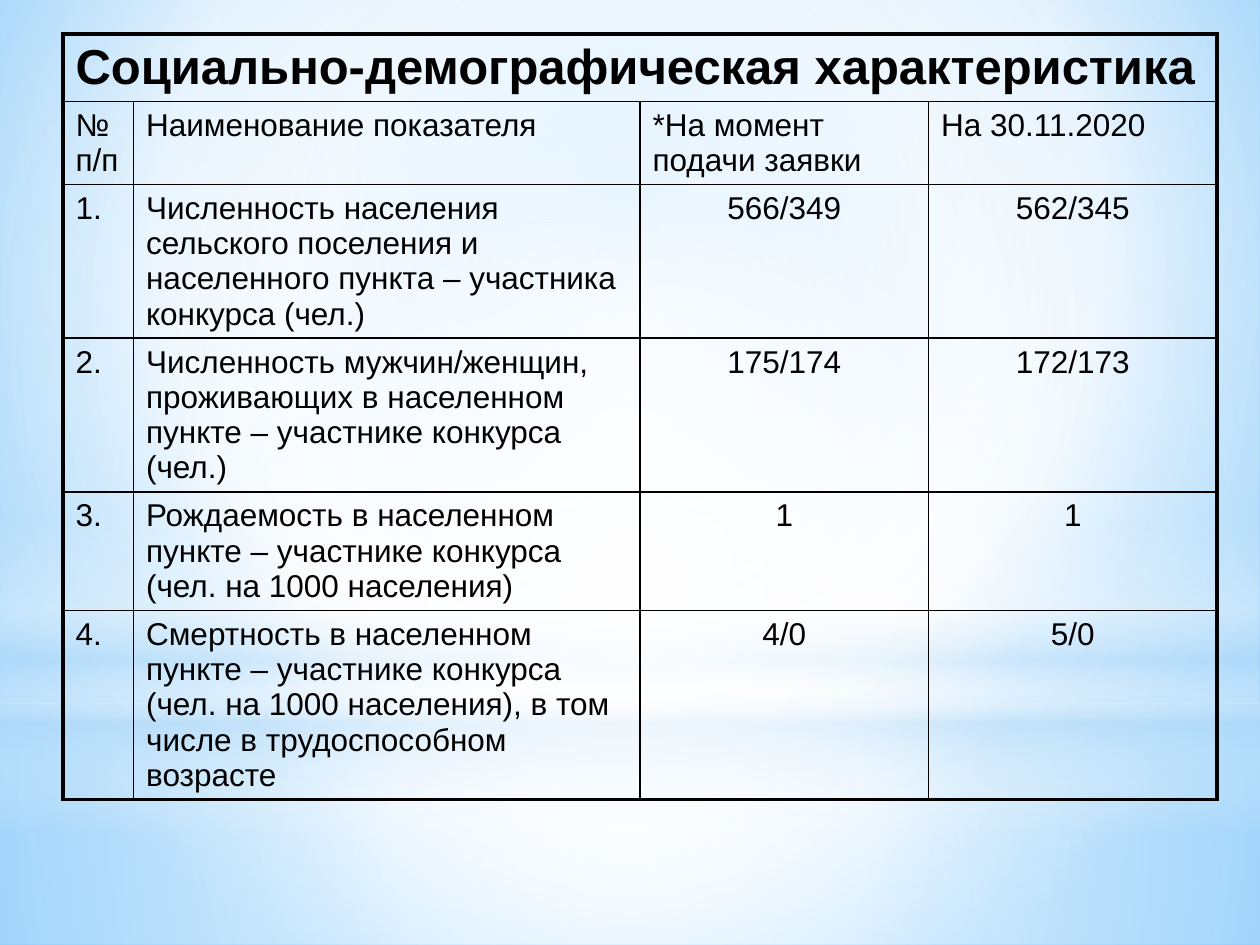
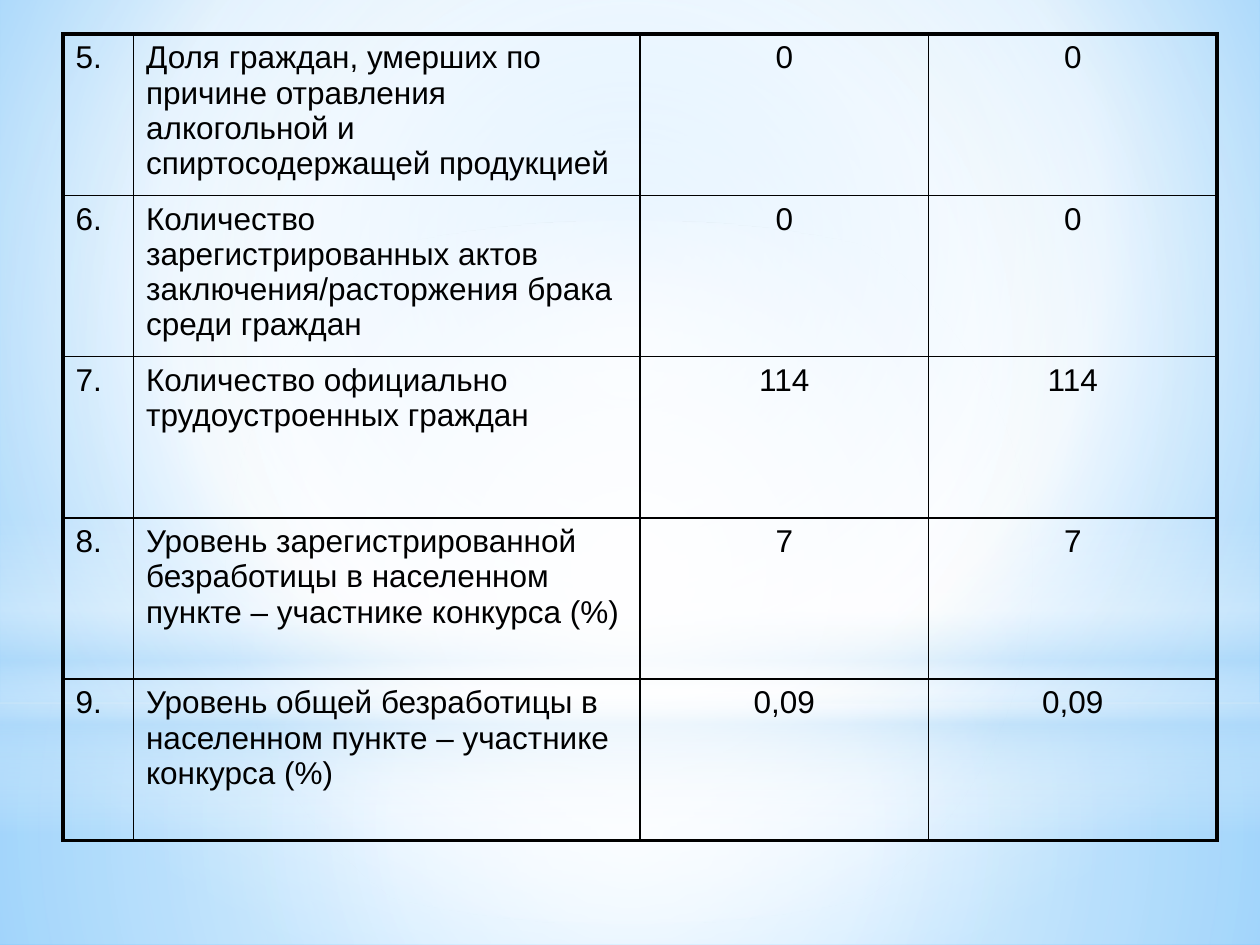
import dataclasses

import lxml.etree
import pptx
import pptx.dml.color
import pptx.enum.shapes
import pptx.enum.text
import pptx.oxml
import pptx.oxml.ns
import pptx.util

Inches = pptx.util.Inches
Pt = pptx.util.Pt
SHAPE = pptx.enum.shapes.MSO_SHAPE

# Content: a row with a single text spans the whole table
SHEETS = [
    {"height": 6.47, "row": 0.32, "rows": [
        ("Социально-демографическая характеристика",),
        ("№ п/п", "Наименование показателя",
         "*На момент подачи заявки", "На 30.11.2020"),
        ("1.", "Численность населения сельского поселения и населенного "
         "пункта – участника конкурса (чел.)", "566/349", "562/345"),
        ("2.", "Численность мужчин/женщин, проживающих в населенном "
         "пункте – участнике конкурса (чел.)", "175/174", "172/173"),
        ("3.", "Рождаемость в населенном пункте – участнике конкурса "
         "(чел. на 1000 населения)", "1", "1"),
        ("4.", "Смертность в населенном пункте – участнике конкурса "
         "(чел. на 1000 населения), в том числе в трудоспособном возрасте",
         "4/0", "5/0"),
    ]},
    {"height": 6.42, "row": 1.28, "rows": [
        ("5.", "Доля граждан, умерших по причине отравления алкогольной и "
         "спиртосодержащей продукцией", "0", "0"),
        ("6.", "Количество зарегистрированных актов заключения/расторжения "
         "брака среди граждан", "0", "0"),
        ("7.", "Количество официально трудоустроенных граждан", "114", "114"),
        ("8.", "Уровень зарегистрированной безработицы в населенном "
         "пункте – участнике конкурса (%)", "7", "7"),
        ("9.", "Уровень общей безработицы в населенном пункте – участнике "
         "конкурса (%)", "0,09", "0,09"),
    ]},
]
LEFT, TOP = 0.5, 0.27
COLS = (0.56, 4.02, 2.29, 2.29)


@dataclasses.dataclass(frozen=True)
class Theme:
    font: str = "Arial"
    title: int = 28
    body: int = 18
    ink: str = "000000"
    white: str = "FFFFFF"
    mist: str = "B4DCFA"
    sky: str = "9ED5FF"
    deep: str = "5BB9FF"
    thin: float = 1
    thick: float = 2.25


LOOK = Theme()

# Gradients: stops are (place, colour, opacity), all in percent
ROUND = '<a:path path="circle"><a:fillToRect l="{}" t="{}" r="{}" b="{}"/></a:path>'
CENTRE = ROUND.format(*["50%"] * 4)
DOWN = '<a:lin ang="5400000" scaled="0"/>'
W, M = LOOK.white, LOOK.mist
SKY = ([(0, LOOK.sky, 100), (60, W, 100), (100, LOOK.deep, 100)],
       ROUND.format("20%", "10%", "20%", "60%"))
# Backdrop layers: shape, top, height, gradient
LAYERS = [
    (SHAPE.RECTANGLE, 5.58, 1.92, ([(0, W, 91), (37, W, 76), (100, M, 79)], CENTRE)),
    (SHAPE.RECTANGLE, 0, 5.58, ([(0, W, 89), (48, W, 62), (100, M, 79)], CENTRE)),
    (SHAPE.RECTANGLE, 4.12, 2.5, ([(0, W, 0), (29, W, 30), (45, M, 40),
                                   (55, W, 26), (65, M, 60), (100, W, 0)], DOWN)),
    (SHAPE.OVAL, 1.75, 5.58, ([(0, W, 100), (56, W, 0)], CENTRE)),
]


def paint(item, blend):
    """Swap the first solid fill of an element for a gradient."""
    stops, way = blend
    marks = "".join(
        f'<a:gs pos="{pos * 1000}"><a:srgbClr val="{tint}">'
        f'<a:alpha val="{alpha * 1000}"/></a:srgbClr></a:gs>'
        for pos, tint, alpha in stops)
    grad = pptx.oxml.parse_xml(
        f'<a:gradFill {pptx.oxml.ns.nsdecls("a")} rotWithShape="1">'
        f'<a:gsLst>{marks}</a:gsLst>{way}</a:gradFill>')
    old = item.xpath(".//a:solidFill")[0]
    old.getparent().replace(old, grad)


def dress(deck, slide):
    """Draw the shared backdrop and move it to the slide master."""
    master = deck.slide_master
    master.background.fill.solid()
    master.background.fill.fore_color.rgb = pptx.dml.color.RGBColor.from_string(W)
    paint(master.element, SKY)
    tree = master.element.xpath("./p:cSld/p:spTree")[0]
    for num, (kind, top, high, blend) in enumerate(LAYERS, 101):
        shape = slide.shapes.add_shape(
            kind, 0, Inches(top), deck.slide_width, Inches(high))
        shape.shadow.inherit = False
        shape.line.fill.background()
        shape.fill.solid()
        paint(shape.element, blend)
        shape.element.xpath(".//p:cNvPr")[0].set("id", str(num))
        tree.append(shape.element)


def frame(cell, edges):
    """Draw cell borders; edges tells which sides lie on the rim."""
    props = cell._tc.get_or_add_tcPr()
    for side in "LRTB":
        wide = Pt(LOOK.thick if edges[side] else LOOK.thin)
        props.append(pptx.oxml.parse_xml(
            f'<a:ln{side} {pptx.oxml.ns.nsdecls("a")} w="{wide}"><a:solidFill>'
            f'<a:srgbClr val="{LOOK.ink}"/></a:solidFill></a:ln{side}>'))
    cell.fill.background()


def write(cell, text, size, bold, mid):
    para = cell.text_frame.paragraphs[0]
    if mid:
        para.alignment = pptx.enum.text.PP_ALIGN.CENTER
    run = para.add_run()
    run.text = text
    run.font.name = LOOK.font
    run.font.size = Pt(size)
    run.font.bold = bold
    run.font.color.rgb = pptx.dml.color.RGBColor.from_string(LOOK.ink)


def tabulate(slide, sheet):
    rows = sheet["rows"]
    box = slide.shapes.add_table(
        len(rows), len(COLS), Inches(LEFT), Inches(TOP),
        Inches(sum(COLS)), Inches(sheet["height"]))
    table = box.table
    table.first_row = table.horz_banding = False
    for col, wide in zip(table.columns, COLS):
        col.width = Inches(wide)
    for row in table.rows:
        row.height = Inches(sheet["row"])
    box.height = Inches(sheet["height"])

    last = len(COLS) - 1
    for r, texts in enumerate(rows):
        title = len(texts) == 1
        if title:
            table.cell(r, 0).merge(table.cell(r, last))
        for c in range(len(COLS)):
            frame(table.cell(r, c), {
                "L": c == 0, "R": title or c == last,
                "T": r == 0, "B": r == len(rows) - 1})
        # Values are centred in the numbered rows
        data = texts[0].endswith(".")
        for c, text in enumerate(texts):
            write(table.cell(r, c), text,
                  LOOK.title if title else LOOK.body, title, data and c > 1)


def main():
    deck = pptx.Presentation()
    deck.slide_width, deck.slide_height = Inches(10), Inches(7.5)
    for num, sheet in enumerate(SHEETS):
        slide = deck.slides.add_slide(deck.slide_layouts[6])
        if num == 0:
            dress(deck, slide)
        tabulate(slide, sheet)
    deck.save("out.pptx")


if __name__ == "__main__":
    main()
